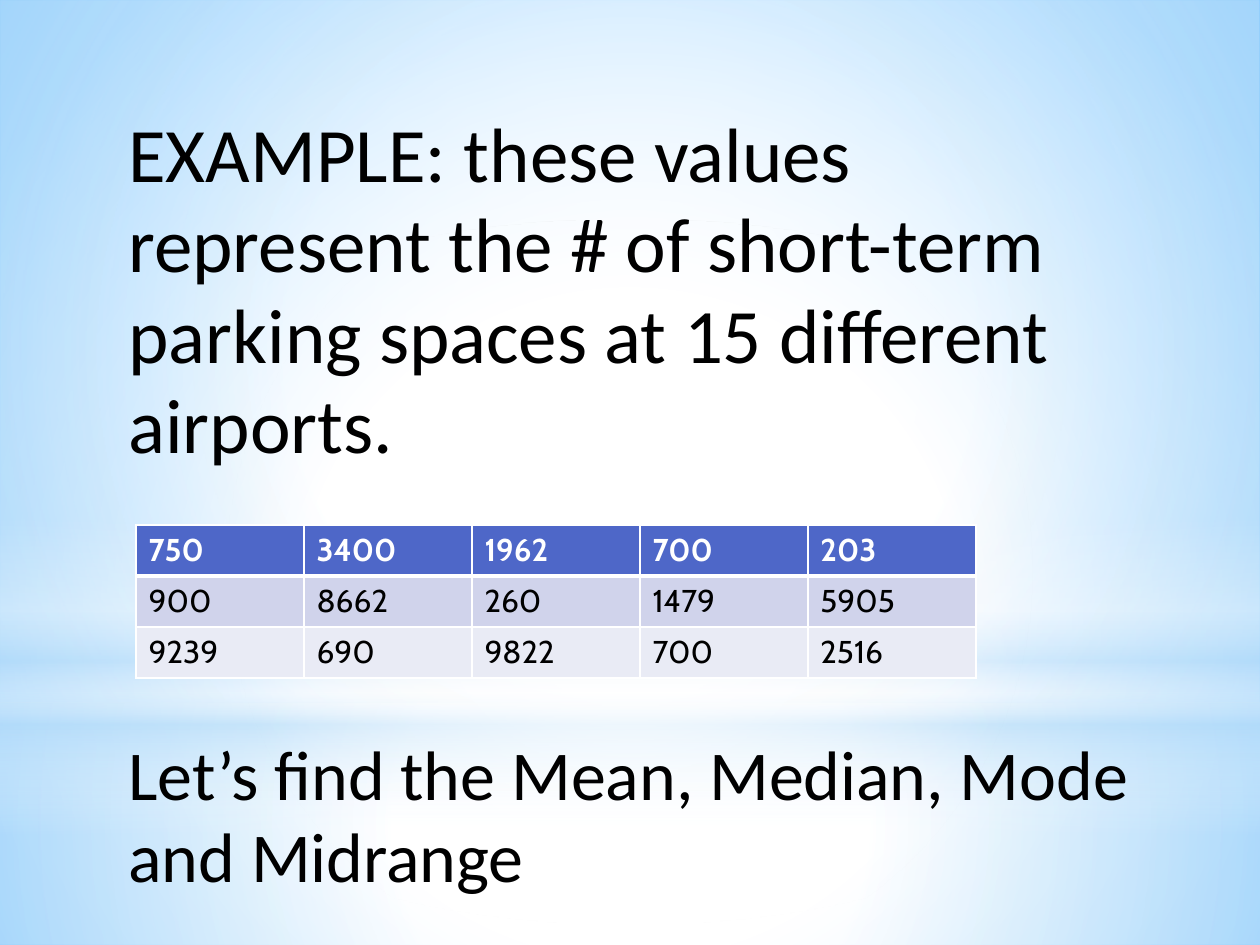
import pptx
import pptx.dml.color
import pptx.enum.shapes
import pptx.enum.text
import pptx.oxml
import pptx.oxml.ns
import pptx.util

PX = 914400 / 126
COLORS = {
    "white": "FFFFFF", "black": "000000", "sky": "63BCFF", "pale": "B4DCFA",
    "header": "4E67C8", "band_dark": "D0D3EB", "band_light": "E9EBF5",
}
SHAPES = pptx.enum.shapes.MSO_SHAPE
QN = pptx.oxml.ns.qn
NS = pptx.oxml.ns.nsdecls("a")
CENTER = (50, 50, 50, 50)
PARKING_SPACES = [
    [750, 3400, 1962, 700, 203],
    [900, 8662, 260, 1479, 5905],
    [9239, 690, 9822, 700, 2516],
]


def px(n):
    return pptx.util.Emu(round(n * PX))


def rgb(name):
    return pptx.dml.color.RGBColor.from_string(COLORS[name])


def set_gradient(fill, parent, stops, focus=None):
    """Stops are (position, colour, opacity); without a focus it runs downwards."""
    stop_xml = "".join(
        f'<a:gs pos="{pos * 1000}"><a:srgbClr val="{COLORS[color]}">'
        f'<a:alpha val="{opacity * 1000}"/></a:srgbClr></a:gs>'
        for pos, color, opacity in stops)
    if focus:
        left, top, right, bottom = (n * 1000 for n in focus)
        path_xml = (f'<a:path path="circle"><a:fillToRect l="{left}" t="{top}" '
                    f'r="{right}" b="{bottom}"/></a:path>')
    else:
        path_xml = '<a:lin ang="5400000" scaled="0"/>'
    grad = pptx.oxml.parse_xml(
        f'<a:gradFill {NS} rotWithShape="1"><a:gsLst>{stop_xml}</a:gsLst>'
        f'{path_xml}</a:gradFill>')
    fill.solid()
    solid = parent.find(".//" + QN("a:solidFill"))
    solid.getparent().replace(solid, grad)


def add_glow(slide, kind, top, height, stops, focus=None):
    sp = slide.shapes.add_shape(kind, 0, px(top), px(1260), px(height))
    sp.shadow.inherit = False
    sp.line.fill.background()
    set_gradient(sp.fill, sp.element.spPr, stops, focus)


def add_run(p, text, font, size, color, bold=False):
    r = p.add_run()
    r.text = text
    r.font.name = font
    r.font.size = pptx.util.Pt(size)
    r.font.bold = bold
    r.font.color.rgb = rgb(color)


def add_body(slide):
    tf = slide.shapes.add_textbox(px(116), px(95), px(1029), px(819)).text_frame
    tf.word_wrap = True
    tf.vertical_anchor = pptx.enum.text.MSO_ANCHOR.MIDDLE
    p = tf.paragraphs[0]
    p.line_spacing = 0.98
    add_run(p, "EXAMPLE: these values represent the # of short-term parking "
               "spaces at 15 different airports.", "Calibri", 44, "black")
    p = tf.add_paragraph()
    p.line_spacing = 0.98
    p.space_before = pptx.util.Pt(150)
    add_run(p, "Let’s find the Mean, Median, Mode and Midrange",
            "Calibri", 40, "black")


def set_borders(cell, bottom):
    widths = {"lnL": 1, "lnR": 1, "lnT": 1, "lnB": bottom}
    tc_pr = cell._tc.get_or_add_tcPr()
    for side, width in widths.items():
        tc_pr.append(pptx.oxml.parse_xml(
            f'<a:{side} {NS} w="{width * 12700}"><a:solidFill>'
            f'<a:srgbClr val="{COLORS["white"]}"/></a:solidFill></a:{side}>'))


def add_parking_table(slide):
    rows, cols = len(PARKING_SPACES), len(PARKING_SPACES[0])
    table = slide.shapes.add_table(
        rows, cols, px(136), px(525), px(168 * cols), px(51 * rows)).table
    fills = ["header", "band_dark", "band_light"]
    for i, (values, fill) in enumerate(zip(PARKING_SPACES, fills)):
        header = i == 0
        for j, value in enumerate(values):
            cell = table.cell(i, j)
            set_borders(cell, 3 if header else 1)
            cell.fill.solid()
            cell.fill.fore_color.rgb = rgb(fill)
            add_run(cell.text_frame.paragraphs[0], str(value), "Cabin", 18,
                    "white" if header else "black", header)


def main():
    prs = pptx.Presentation()
    prs.slide_width, prs.slide_height = px(1260), px(945)
    slide = prs.slides.add_slide(prs.slide_layouts[6])
    set_gradient(slide.background.fill, slide.element,
                 [(0, "white", 100), (42, "white", 100), (100, "sky", 100)],
                 (24, 44, 24, 12))
    add_glow(slide, SHAPES.RECTANGLE, 703, 242,
             [(0, "white", 91), (37, "white", 76), (100, "pale", 79)], CENTER)
    add_glow(slide, SHAPES.RECTANGLE, 0, 703,
             [(0, "white", 89), (48, "white", 62), (100, "pale", 79)], CENTER)
    add_glow(slide, SHAPES.RECTANGLE, 519, 315,
             [(0, "white", 0), (29, "white", 30), (45, "pale", 40),
              (55, "white", 26), (65, "pale", 60), (100, "white", 0)])
    add_glow(slide, SHAPES.OVAL, 220, 703,
             [(0, "white", 100), (56, "white", 0)], CENTER)
    add_body(slide)
    add_parking_table(slide)
    prs.save("out.pptx")


if __name__ == "__main__":
    main()
